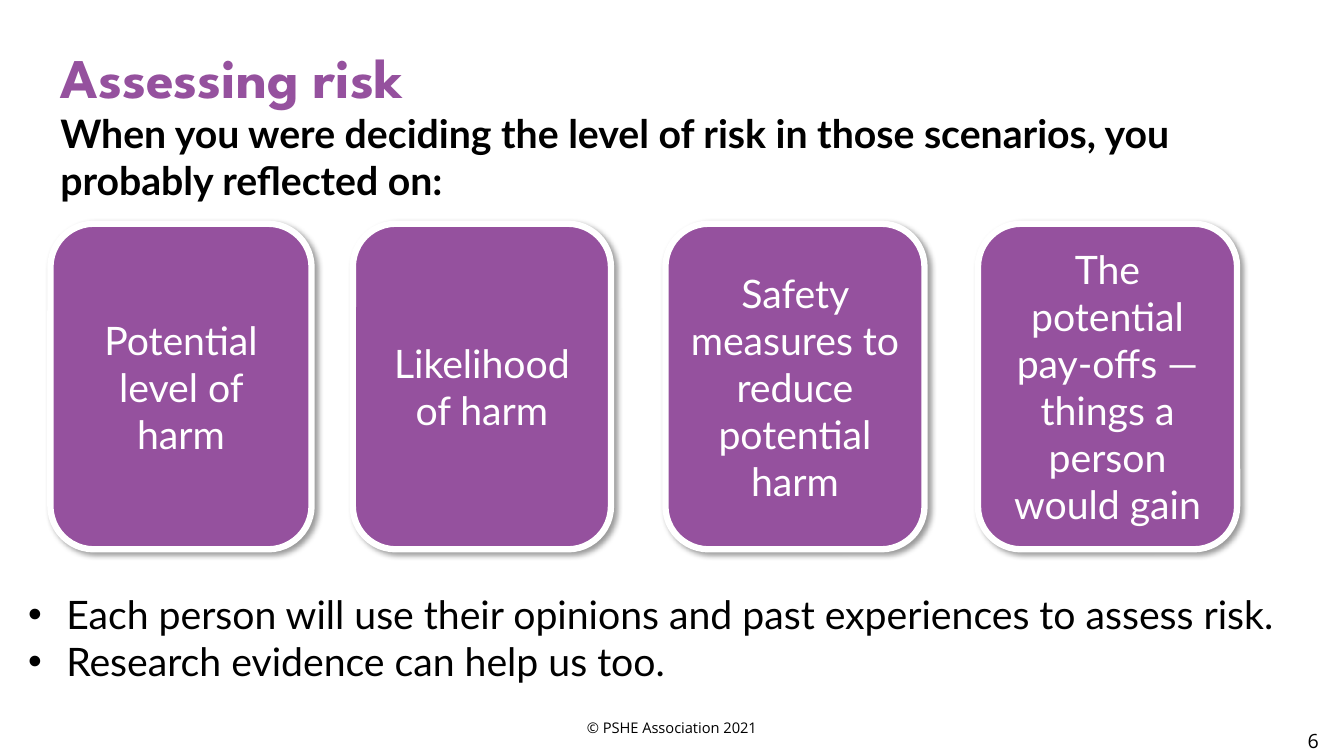
"""Builds the slide on assessing risk: heading, four factor cards and two bullets."""
import pptx
import pptx.util
import pptx.dml.color
import pptx.enum.shapes
import pptx.enum.text
import pptx.oxml
import pptx.oxml.ns

Inches = pptx.util.Inches
Pt = pptx.util.Pt
Align = pptx.enum.text.PP_ALIGN
Anchor = pptx.enum.text.MSO_ANCHOR
COLORS = {"purple": "95519E", "white": "FFFFFF", "black": "000000"}
rgb = {name: pptx.dml.color.RGBColor.from_string(code) for name, code in COLORS.items()}

deck = pptx.Presentation()
deck.slide_width, deck.slide_height = Inches(13.33), Inches(7.5)
slide = deck.slides.add_slide(deck.slide_layouts[6])


def write(text, frame, first=True, size=28, font="Lato", color="black",
          bold=False, align=Align.LEFT, anchor=Anchor.TOP, bullet=False):
    """Add one formatted paragraph to a text frame."""
    frame.word_wrap = True
    frame.vertical_anchor = anchor
    para = frame.paragraphs[0] if first else frame.add_paragraph()
    para.alignment = align
    if bullet:
        props = para._p.get_or_add_pPr()
        props.set("marL", str(Inches(0.38)))
        props.set("indent", str(-Inches(0.38)))
        ns = pptx.oxml.ns.nsdecls("a")
        props.append(pptx.oxml.parse_xml(f'<a:buFont {ns} typeface="Arial"/>'))
        props.append(pptx.oxml.parse_xml(f'<a:buChar {ns} char="•"/>'))
    run = para.add_run()
    run.text = text
    run.font.name, run.font.size, run.font.bold = font, Pt(size), bold
    run.font.color.rgb = rgb[color]


def box(left, top, width, height):
    """Add a text box and return its frame."""
    area = [Inches(n) for n in (left, top, width, height)]
    return slide.shapes.add_textbox(*area).text_frame


head = box(0.5, 0.37, 11.72, 1.72)
write("Assessing risk", head, size=40, font="League Spartan", color="purple", bold=True)
write("When you were deciding the level of risk in those scenarios, you probably reflected on:",
      head, first=False, bold=True)

cards = [
    (0.5, 2.59, 0.1, "Potential level of harm"),
    (3.5, 2.56, 0.1, "Likelihood of harm"),
    (6.6, 2.57, 0.1, "Safety measures to reduce potential harm"),
    (9.7, 2.57, 0.04, "The potential pay-offs — things a person would gain"),
]
for left, width, inset, text in cards:
    card = slide.shapes.add_shape(pptx.enum.shapes.MSO_SHAPE.ROUNDED_RECTANGLE,
                                  Inches(left), Inches(2.22), Inches(width), Inches(3.23))
    card.fill.solid()
    card.fill.fore_color.rgb = rgb["purple"]
    card.line.color.rgb = rgb["white"]
    card.line.width = Pt(4.5)
    card.shadow.inherit = False
    effects = card._element.spPr.find(pptx.oxml.ns.qn("a:effectLst"))
    effects.append(pptx.oxml.parse_xml(
        f'<a:outerShdw {pptx.oxml.ns.nsdecls("a")} blurRad="{Pt(4)}" dist="{Pt(3)}" '
        f'dir="2700000" algn="tl" rotWithShape="0"><a:srgbClr val="{COLORS["black"]}">'
        '<a:alpha val="40000"/></a:srgbClr></a:outerShdw>'))
    frame = card.text_frame
    frame.margin_left = frame.margin_right = Inches(inset)
    write(text, frame, color="white", align=Align.CENTER, anchor=Anchor.MIDDLE)

notes = box(0.18, 5.81, 12.84, 1.04)
write("Each person will use their opinions and past experiences to assess risk.",
      notes, bullet=True)
write("Research evidence can help us too.", notes, first=False, bullet=True)

write("© PSHE Association 2021", box(0, 7.02, 13.33, 0.4), size=10.5, font="Open Sans",
      align=Align.CENTER, anchor=Anchor.MIDDLE)
write("6", box(12.87, 7.18, 0.46, 0.4), size=14, font="Open Sans")

deck.save("out.pptx")
